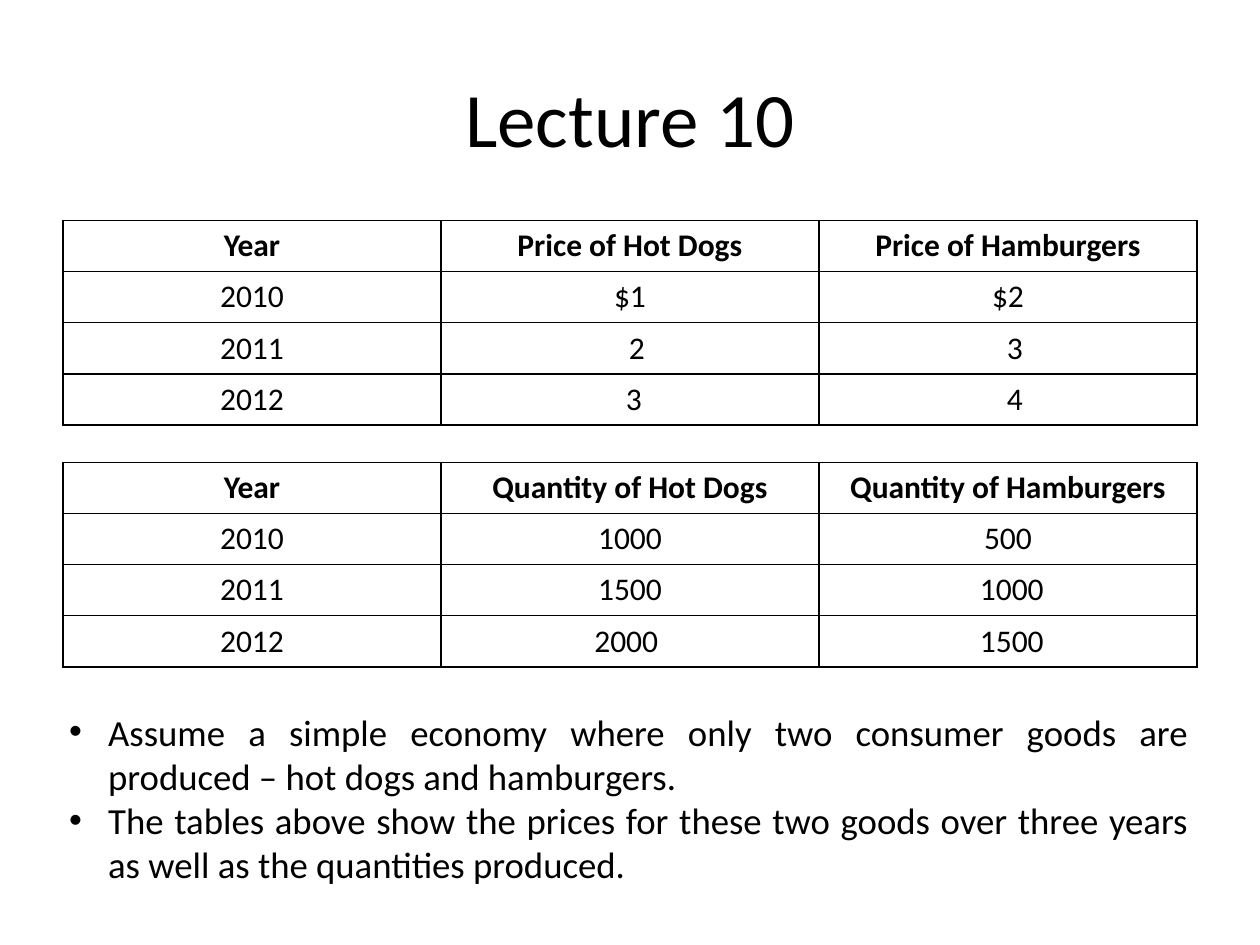
import pptx
import pptx.util
import pptx.dml.color
import pptx.enum.text
import pptx.oxml
import pptx.oxml.ns
from lxml import etree

Inches, Pt = pptx.util.Inches, pptx.util.Pt
ALIGN = pptx.enum.text.PP_ALIGN
MIDDLE = pptx.enum.text.MSO_ANCHOR.MIDDLE
COLORS = {"ink": "000000", "paper": "FFFFFF"}
NS = pptx.oxml.ns.nsdecls("a")
qn = pptx.oxml.ns.qn


def style(para, size, align, bold=False):
    para.alignment = align
    for run in para.runs:
        run.font.name = "Calibri"
        run.font.size = Pt(size)
        run.font.bold = bold
        run.font.color.rgb = pptx.dml.color.RGBColor.from_string(COLORS["ink"])


def border(cell):
    props = cell._tc.get_or_add_tcPr()
    for spot, side in enumerate(("lnL", "lnR", "lnT", "lnB")):
        props.insert(spot, pptx.oxml.parse_xml(
            f'<a:{side} {NS} w="{Pt(1)}"><a:solidFill>'
            f'<a:srgbClr val="{COLORS["ink"]}"/></a:solidFill></a:{side}>'))


deck = pptx.Presentation()
deck.slide_width, deck.slide_height = Inches(10), Inches(7.5)
slide = deck.slides.add_slide(deck.slide_layouts[5])

title = slide.shapes.title
title.left, title.top = Inches(0.5), Inches(0.3)
title.width, title.height = Inches(9), Inches(1.25)
title.text_frame.text = "Lecture 10"
title.text_frame.vertical_anchor = MIDDLE
style(title.text_frame.paragraphs[0], 44, ALIGN.CENTER)

# Each table: top, rows, and extra left or right margin that nudges a figure
tables = [
    (1.75,
     [("Year", "Price of Hot Dogs", "Price of Hamburgers"),
      ("2010", "$1", "$2"),
      ("2011", "2", "3"),
      ("2012", "3", "4")],
     {(2, 1): 0.11, (2, 2): 0.11, (3, 1): 0.06, (3, 2): 0.11}),
    (3.67,
     [("Year", "Quantity of Hot Dogs", "Quantity of Hamburgers"),
      ("2010", "1000", "500"),
      ("2011", "1500", "1000"),
      ("2012", "2000", "1500")],
     {(2, 2): 0.06, (3, 1): -0.06, (3, 2): 0.06}),
]
for top, rows, nudges in tables:
    grid = slide.shapes.add_table(
        len(rows), 3, Inches(0.5), Inches(top), Inches(9), Inches(1.62)).table
    for r, row in enumerate(rows):
        for c, text in enumerate(row):
            cell = grid.cell(r, c)
            cell.text_frame.text = text
            style(cell.text_frame.paragraphs[0], 18, ALIGN.CENTER, r == 0)
            nudge = nudges.get((r, c), 0)
            cell.margin_left = Inches(0.1 + max(nudge, 0))
            cell.margin_right = Inches(0.1 + max(-nudge, 0))
            cell.fill.solid()
            cell.fill.fore_color.rgb = pptx.dml.color.RGBColor.from_string(
                COLORS["paper"])
            border(cell)

notes = [
    "Assume a simple economy where only two consumer goods are produced "
    "– hot dogs and hamburgers.",
    "The tables above show the prices for these two goods over three years "
    "as well as the quantities produced.",
]
box = slide.shapes.add_textbox(
    Inches(0.45), Inches(5.58), Inches(9.08), Inches(1.51))
frame = box.text_frame
frame.word_wrap = True
frame.auto_size = pptx.enum.text.MSO_AUTO_SIZE.SHAPE_TO_FIT_TEXT
for i, note in enumerate(notes):
    para = frame.add_paragraph() if i else frame.paragraphs[0]
    para.text = note
    style(para, 21, ALIGN.JUSTIFY)
    props = para._p.get_or_add_pPr()
    props.set("marL", str(Inches(0.31)))
    props.set("indent", str(Inches(-0.31)))
    etree.SubElement(props, qn("a:buFont")).set("typeface", "Arial")
    etree.SubElement(props, qn("a:buChar")).set("char", "•")

deck.save("out.pptx")
